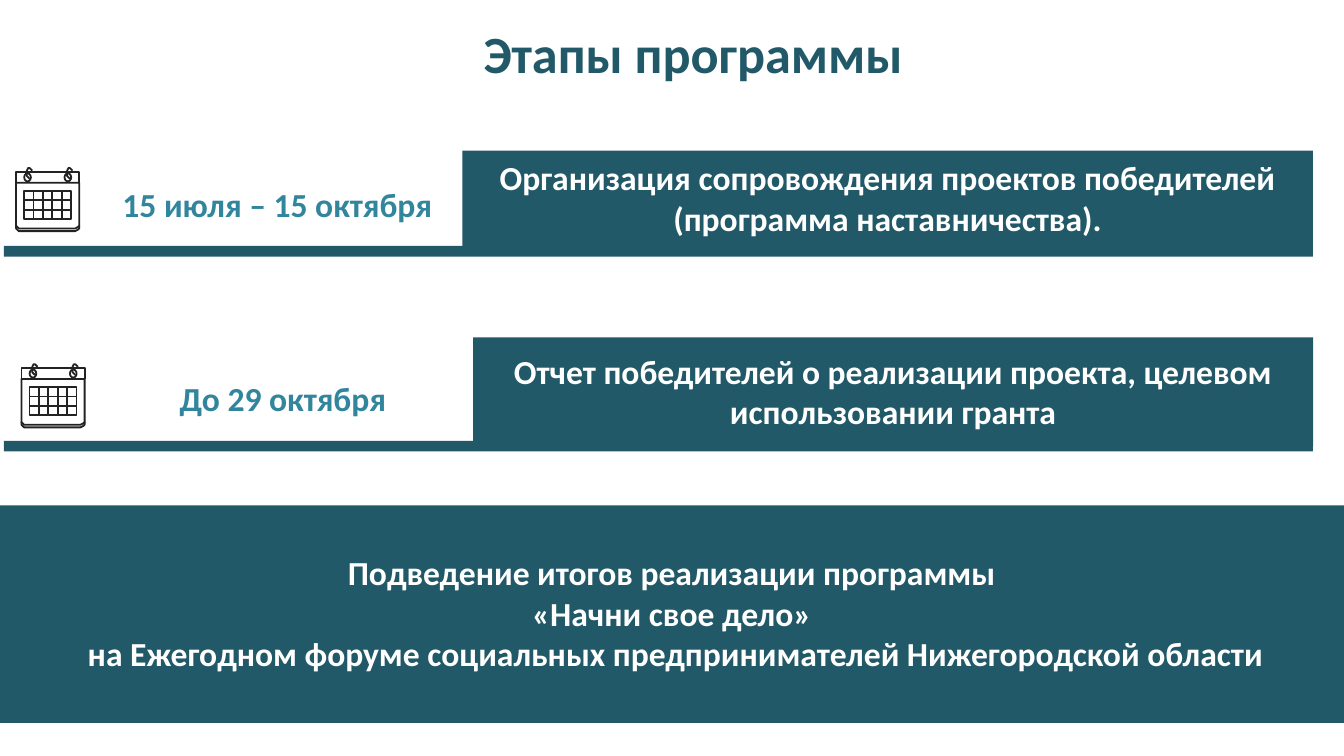
"""Build the programme stages slide: dated stages with calendars and a closing banner."""
import pptx
import pptx.util
import pptx.dml.color
import pptx.enum.shapes
import pptx.enum.text
from lxml import etree

Inches, Pt = pptx.util.Inches, pptx.util.Pt
SHAPE = pptx.enum.shapes.MSO_SHAPE
ANCHOR = pptx.enum.text.MSO_ANCHOR

COLORS = {"teal": "215968", "date": "31859C", "ink": "222222", "white": "FFFFFF"}
TITLE = "Этапы программы "
STAGES = [
    {"date": "15 июля – 15 октября", "date_box": (0.53, 1.32, 3.07, 0.39),
     "task": "Организация сопровождения проектов победителей (программа наставничества).",
     "task_box": (3.44, 1.12, 6.33, 0.71), "top": 0.05, "icon": (0.12, 1.25), "bar": 1.83},
    {"date": "До 29 октября", "date_box": (0.7, 2.73, 2.81, 0.47),
     "task": "Отчет победителей о реализации проекта, целевом использовании гранта",
     "task_box": (3.52, 2.51, 6.25, 0.81), "top": 0.1, "icon": (0.16, 2.71), "bar": 3.28},
]
BANNER = ["Подведение итогов реализации программы", "«Начни свое дело»",
          " на Ежегодном форуме социальных предпринимателей Нижегородской области"]
BANNER_BOX = (0, 3.76, 10, 1.62)

HEADER = [(0.47, 0.11), (0.47, 0.03), (0, 0.03), (0, 0.11)]
PAGE = [(0, 0.11), (0, 0.43), (0.01, 0.44), (0.02, 0.45), (0.44, 0.45),
        (0.46, 0.44), (0.47, 0.43), (0.47, 0.11), (0, 0.11)]
LIP = [(0, 0.43), (0, 0.45), (0.01, 0.46), (0.02, 0.47), (0.44, 0.47),
       (0.46, 0.46), (0.47, 0.45), (0.47, 0.43)]
HOOK = [(0.02, 0.08), (0.01, 0.07), (0, 0.06), (0, 0.02), (0.01, 0),
        (0.02, 0), (0.03, 0.01), (0.04, 0.02)]
RINGS = [0.06, 0.36]
GRID = {"x": 0.06, "y": 0.17, "cell": 0.07, "cols": 5, "rows": 3}


def rgb(name):
    return pptx.dml.color.RGBColor.from_string(COLORS[name])


def write(tf, lines, size, color, anchor, top=0.05):
    frame = {"word_wrap": True, "vertical_anchor": anchor, "margin_top": Inches(top)}
    for key, value in frame.items():
        setattr(tf, key, value)
    for i, line in enumerate(lines):
        p = tf.add_paragraph() if i else tf.paragraphs[0]
        p.alignment = pptx.enum.text.PP_ALIGN.CENTER
        r = p.add_run()
        r.text = line
        font = {"size": Pt(size), "name": "Calibri", "bold": True}
        for key, value in font.items():
            setattr(r.font, key, value)
        r.font.color.rgb = rgb(color)


def add_box(s, box, fill=None, kind=SHAPE.RECTANGLE):
    sp = s.shapes.add_shape(kind, *map(Inches, box))
    sp.shadow.inherit = False
    sp.line.fill.background()
    if fill:
        sp.fill.solid()
        sp.fill.fore_color.rgb = rgb(fill)
    else:
        sp.fill.background()
    return sp


def ink(sp):
    sp.line.color.rgb = rgb("ink")
    sp.line.width = Pt(0.96)


def outline(sp):
    sp.shadow.inherit = False
    sp.fill.background()
    ink(sp)


def add_calendar(s, x, y):
    icon = s.shapes.add_group_shape().shapes

    def trace(points, dx=0):
        pts = [(Inches(x + dx + px), Inches(y + py)) for px, py in points]
        builder = icon.build_freeform(*pts[0], scale=1.0)
        builder.add_line_segments(pts[1:], close=pts[0] == pts[-1])
        outline(builder.convert_to_shape())

    def rule(x1, y1, x2, y2):
        line = icon.add_connector(pptx.enum.shapes.MSO_CONNECTOR.STRAIGHT,
                                  *map(Inches, (x1, y1, x2, y2)))
        ink(line)
        etree.SubElement(line._element.spPr, pptx.oxml.ns.qn("a:effectLst"))

    for points in (HEADER, LIP, PAGE):
        trace(points)
    for ring in RINGS:
        outline(icon.add_shape(SHAPE.OVAL, *map(Inches, (x + ring, y + 0.04, 0.05, 0.06))))
        trace(HOOK, ring + 0.02)
    cell = GRID["cell"]
    left, top = x + GRID["x"], y + GRID["y"]
    width, height = GRID["cols"] * cell, GRID["rows"] * cell
    outline(icon.add_shape(SHAPE.RECTANGLE, *map(Inches, (left, top, width, height))))
    for row in range(1, GRID["rows"]):
        rule(left, top + row * cell, left + width, top + row * cell)
    for col in range(1, GRID["cols"]):
        rule(left + col * cell, top, left + col * cell, top + height)


def main():
    prs = pptx.Presentation()
    prs.slide_width = Inches(10)
    prs.slide_height = prs.slide_width * 9 // 16
    s = prs.slides.add_slide(prs.slide_layouts[5])
    title = s.shapes.title
    for key, value in zip(("left", "top", "width", "height"), (0.7, 0, 9, 0.78)):
        setattr(title, key, Inches(value))
    write(title.text_frame, [TITLE], 28, "teal", ANCHOR.MIDDLE)
    for stage in STAGES:
        date = add_box(s, stage["date_box"], kind=SHAPE.ROUNDED_RECTANGLE)
        date.adjustments[0] = 0
        write(date.text_frame, [stage["date"]], 18, "date", ANCHOR.MIDDLE)
        add_calendar(s, *stage["icon"])
        task = add_box(s, stage["task_box"], "teal")
        write(task.text_frame, [stage["task"]], 18, "white", ANCHOR.TOP, stage["top"])
        add_box(s, (0.03, stage["bar"], 9.74, 0.08), "teal")
    banner = add_box(s, BANNER_BOX, "teal")
    write(banner.text_frame, BANNER, 18, "white", ANCHOR.TOP, 0.35)
    prs.save("out.pptx")


if __name__ == "__main__":
    main()
